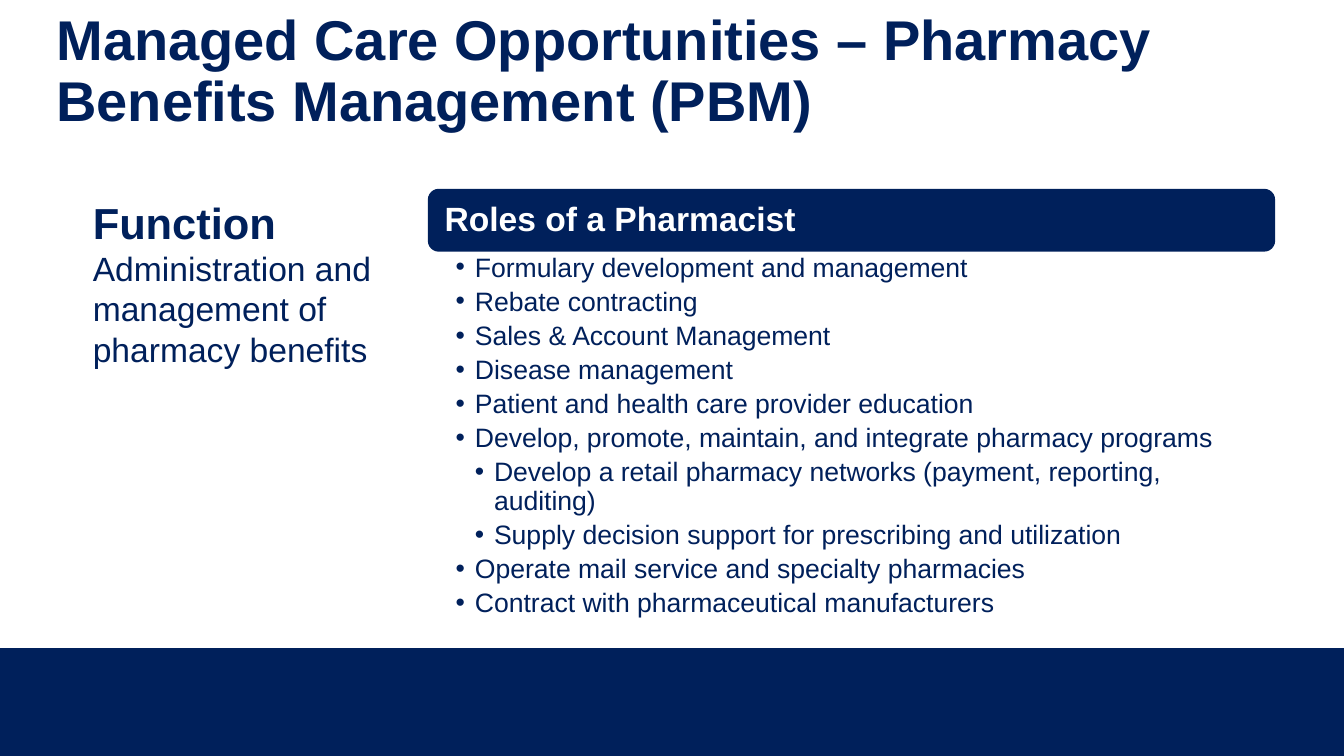
from lxml.etree import SubElement
from pptx import Presentation
from pptx.dml.color import RGBColor
from pptx.enum.shapes import MSO_SHAPE
from pptx.enum.text import MSO_ANCHOR, MSO_AUTO_SIZE, PP_ALIGN
from pptx.oxml.ns import qn
from pptx.util import Emu, Pt

NAVY = "00205B"
WHITE = "FFFFFF"
ROLES = [
    (1, "Formulary development and management"),
    (1, "Rebate contracting"),
    (1, "Sales & Account Management"),
    (1, "Disease management"),
    (1, "Patient and health care provider education"),
    (1, "Develop, promote, maintain, and integrate pharmacy programs"),
    (2, "Develop a retail pharmacy networks (payment, reporting, auditing)"),
    (2, "Supply decision support for prescribing and utilization"),
    (1, "Operate mail service and specialty pharmacies"),
    (1, "Contract with pharmaceutical manufacturers"),
]


def px(length):
    """Convert px, at 100 to the inch, into EMU."""
    return Emu(length * 9144)


def color(hex_string):
    return RGBColor.from_string(hex_string)


class SlideBuilder:
    font_name = "Arial"
    bullet_indent = 19

    def __init__(self, slide):
        self.slide = slide

    def frame(self, shape, insets=(0, 0, 0, 0), anchor=MSO_ANCHOR.TOP):
        """Prepare the text frame of a shape and return it."""
        frame = shape.text_frame
        frame.word_wrap = True
        frame.auto_size = MSO_AUTO_SIZE.NONE
        frame.vertical_anchor = anchor
        (frame.margin_left, frame.margin_top,
         frame.margin_right, frame.margin_bottom) = map(px, insets)
        return frame

    def set_text(self, paragraph, text, size, hex_string=NAVY, bold=False,
                 line_spacing=0.9, space_after=0):
        paragraph.text = text
        paragraph.alignment = PP_ALIGN.LEFT
        paragraph.line_spacing = line_spacing
        paragraph.space_before = Pt(0)
        paragraph.space_after = Pt(space_after)
        for run in paragraph.runs:
            run.font.name = self.font_name
            run.font.size = Pt(size)
            run.font.bold = bold
            run.font.color.rgb = color(hex_string)

    def title(self, text, box):
        title = self.slide.shapes.title
        title.left, title.top, title.width, title.height = map(px, box)
        frame = self.frame(title, anchor=MSO_ANCHOR.MIDDLE)
        self.set_text(frame.paragraphs[0], text, 40, bold=True)

    def block(self, preset, box, hex_string=NAVY):
        block = self.slide.shapes.add_shape(preset, *map(px, box))
        block.shadow.inherit = False
        block.fill.solid()
        block.fill.fore_color.rgb = color(hex_string)
        block.line.color.rgb = color(hex_string)
        block.line.width = Pt(1)
        return block

    def banner(self, text, box):
        banner = self.block(MSO_SHAPE.ROUNDED_RECTANGLE, box)
        frame = self.frame(banner, (13, 13, 13, 13), MSO_ANCHOR.MIDDLE)
        self.set_text(frame.paragraphs[0], text, 24, WHITE, bold=True)

    def text_box(self, box, insets=(0, 0, 0, 0)):
        return self.frame(self.slide.shapes.add_textbox(*map(px, box)), insets)

    def bullets(self, items, box):
        frame = self.text_box(box, (27, 3, 19, 3))
        for index, (level, text) in enumerate(items):
            paragraph = frame.add_paragraph() if index else frame.paragraphs[0]
            self.set_text(paragraph, text, 19, space_after=3.8)
            paragraph.level = level
            properties = paragraph._p.get_or_add_pPr()
            properties.set("marL", str(px(level * self.bullet_indent)))
            properties.set("indent", str(px(-self.bullet_indent)))
            SubElement(properties, qn("a:buFont"), typeface=self.font_name)
            SubElement(properties, qn("a:buChar"), char="•")

    def summary(self, heading, body, box):
        frame = self.text_box(box)
        self.set_text(frame.paragraphs[0], heading, 31, bold=True, line_spacing=1.2)
        self.set_text(frame.add_paragraph(), body, 24, line_spacing=1.0)


def main():
    deck = Presentation()
    deck.slide_width, deck.slide_height = px(1333), px(750)
    builder = SlideBuilder(deck.slides.add_slide(deck.slide_layouts[5]))

    builder.block(MSO_SHAPE.RECTANGLE, (0, 644, 1333, 106))
    builder.title("Managed Care Opportunities – Pharmacy Benefits Management (PBM)",
                  (56, 0, 1256, 145))
    builder.banner("Roles of a Pharmacist", (425, 188, 839, 61))
    builder.bullets(ROLES, (425, 249, 839, 369))
    builder.summary("Function", "Administration and management of pharmacy benefits",
                    (92, 184, 288, 456))

    deck.save("out.pptx")


if __name__ == "__main__":
    main()
